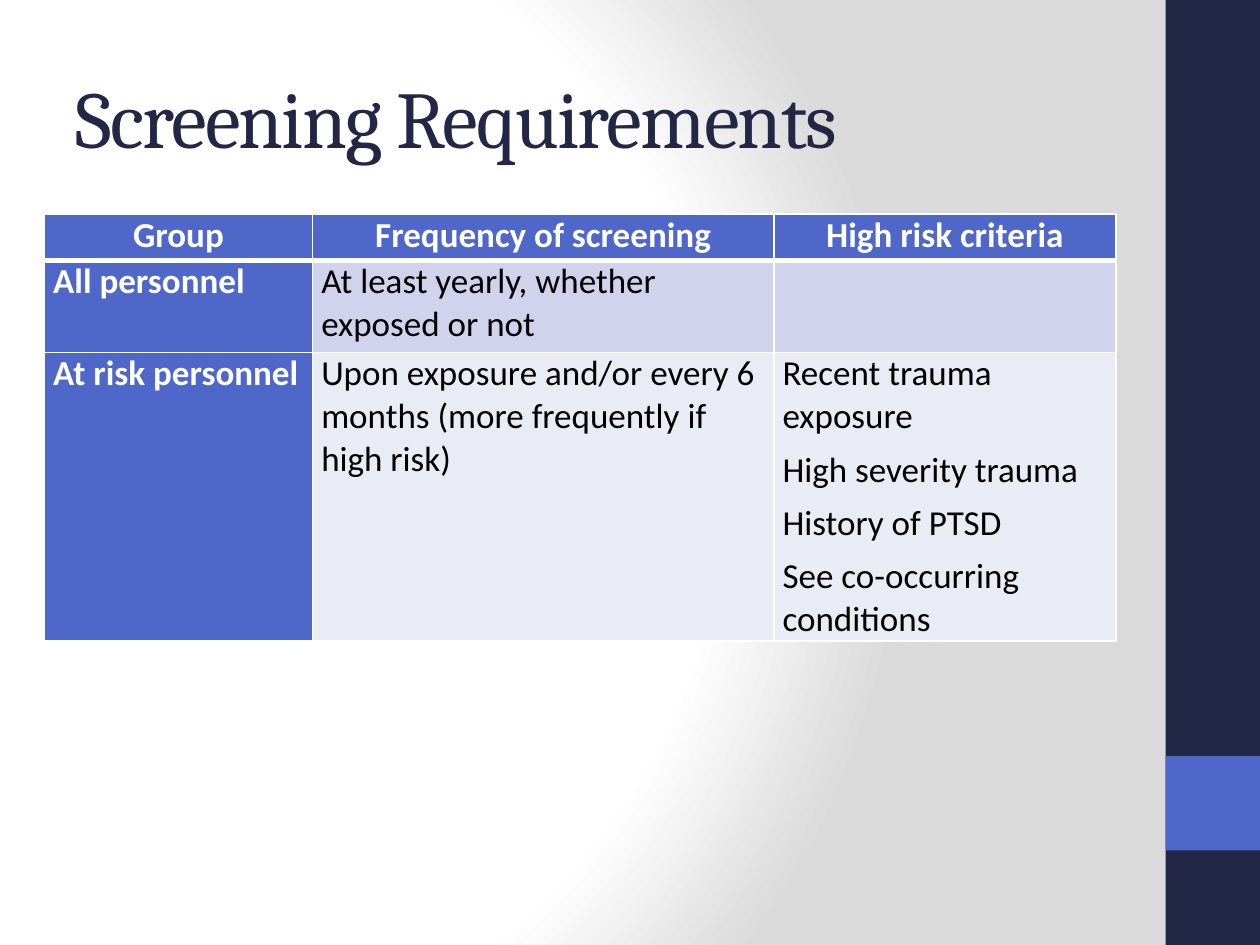
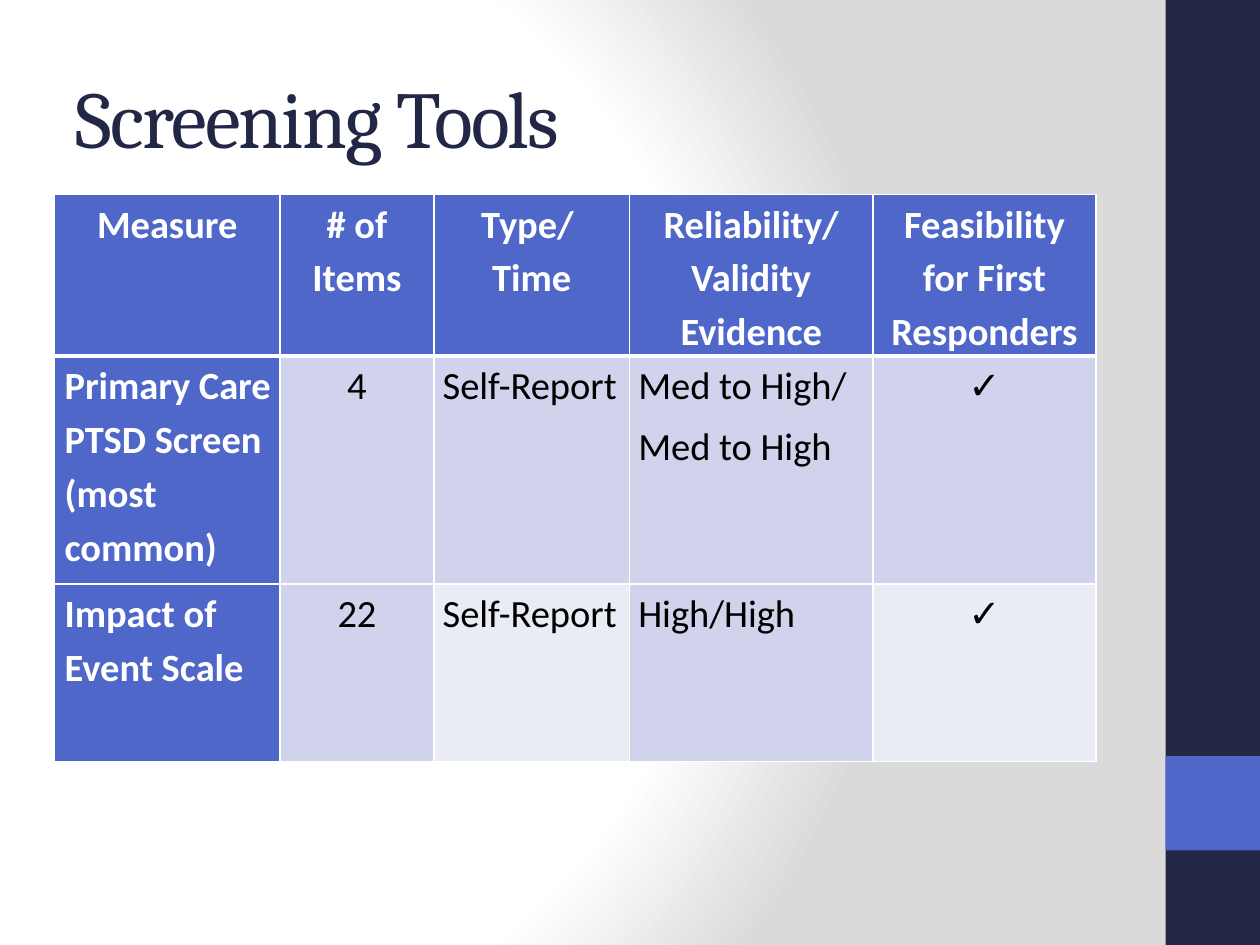
from lxml import etree
from pptx import Presentation
from pptx.dml.color import RGBColor
from pptx.enum.shapes import MSO_SHAPE
from pptx.enum.text import MSO_ANCHOR, PP_ALIGN
from pptx.oxml import parse_xml
from pptx.oxml.ns import nsdecls, qn
from pptx.util import Pt

LEFT, CENTER = PP_ALIGN.LEFT, PP_ALIGN.CENTER
MIDDLE = MSO_ANCHOR.MIDDLE
RECT = MSO_SHAPE.RECTANGLE
TITLE_ONLY = 5

COLORS = {
    "navy": "212745",
    "accent": "4E67C8",
    "band": "D0D3EB",
    "light": "E9EBF5",
    "white": "FFFFFF",
    "black": "000000",
    "grey": "DADADA",
}
TITLE_FONT, BODY_FONT = "Cambria", "Calibri"


def rgb(name):
    return RGBColor.from_string(COLORS[name])


def put_text(tf, text, font=BODY_FONT, size=20, color="black", bold=False, align=LEFT,
             before=0, after=0, line=None, tracking=None):
    """Write text into tf: a newline starts a paragraph, a vertical tab a line."""
    for i, part in enumerate(text.split("\n")):
        p = tf.paragraphs[0] if i == 0 else tf.add_paragraph()
        p.text = part
        p.alignment = align
        p.space_before, p.space_after = Pt(before), Pt(after)
        if line:
            p.line_spacing = line
        for r in p.runs:
            r.font.name, r.font.size, r.font.bold = font, Pt(size), bold
            r.font.color.rgb = rgb(color)
            if tracking:
                r.font._element.set("spc", str(tracking * 100))


def set_background(master):
    stops = "".join(
        f'<a:gs pos="{pos * 1000}"><a:srgbClr val="{COLORS[name]}"/></a:gs>'
        for pos, name in ((0, "white"), (75, "white"), (100, "grey")))
    bg = parse_xml(
        f'<p:bg {nsdecls("p", "a")}><p:bgPr><a:gradFill rotWithShape="1">'
        f'<a:gsLst>{stops}</a:gsLst><a:path path="circle">'
        '<a:fillToRect l="20000" t="50000" r="100000" b="50000"/></a:path>'
        '</a:gradFill><a:effectLst/></p:bgPr></p:bg>')
    c_sld = master.element.find(qn("p:cSld"))
    for old in c_sld.findall(qn("p:bg")):
        c_sld.remove(old)
    c_sld.insert(0, bg)


def add_band(slide, master, top, height, color, position):
    """Draw a band at the right edge and move it to the master's shapes."""
    sp = slide.shapes.add_shape(RECT, Pt(666), Pt(top), Pt(54), Pt(height))
    sp.shadow.inherit = False
    sp.fill.solid()
    sp.fill.fore_color.rgb = rgb(color)
    sp.line.fill.background()
    master.shapes._spTree.insert(2 + position, sp._element)


def add_title_slide(prs, title):
    slide = prs.slides.add_slide(prs.slide_layouts[TITLE_ONLY])
    sp = slide.shapes.title
    sp.left, sp.top, sp.width, sp.height = Pt(36), Pt(21.6), Pt(600), Pt(90)
    sp.text_frame.word_wrap = True
    sp.text_frame.vertical_anchor = MIDDLE
    put_text(sp.text_frame, title, font=TITLE_FONT, size=46, color="navy", tracking=-1)
    return slide


def set_borders(cell, is_header):
    widths = {"a:lnL": 1, "a:lnR": 1}
    if is_header:
        widths["a:lnT"] = 1
    widths["a:lnB"] = 3 if is_header else 1
    tc_pr = cell._tc.get_or_add_tcPr()
    for tag, width in widths.items():
        ln = etree.SubElement(tc_pr, qn(tag), w=str(Pt(width)))
        fill = etree.SubElement(ln, qn("a:solidFill"))
        etree.SubElement(fill, qn("a:srgbClr"), val=COLORS["white"])


def add_grid(slide, left, top, widths, heights, rows, centered=(), column_stripes=False,
             **text_format):
    """Add a table with a coloured header row and first column."""
    table = slide.shapes.add_table(len(rows), len(widths), Pt(left), Pt(top),
                                   Pt(sum(widths)), Pt(sum(heights))).table
    table.horz_banding = False
    table.first_col = True
    for column, width in zip(table.columns, widths):
        column.width = Pt(width)
    for r, (row, height) in enumerate(zip(rows, heights)):
        table.rows[r].height = Pt(height)
        for c, text in enumerate(row):
            cell = table.cell(r, c)
            is_head = r == 0 or c == 0
            striped = r % 2 == 1 or (column_stripes and c % 2 == 1)
            set_borders(cell, r == 0)
            cell.fill.solid()
            cell.fill.fore_color.rgb = rgb(
                "accent" if is_head else "band" if striped else "light")
            cell.margin_left = cell.margin_right = Pt(5)
            cell.margin_top = cell.margin_bottom = 0
            spacing = {"before": 0, "after": 6} if text == "✓" else {}
            put_text(cell.text_frame, text, color="white" if is_head else "black",
                     bold=is_head, align=CENTER if r == 0 or c in centered else LEFT,
                     **{**text_format, **spacing})
    return table


def add_requirements(slide):
    rows = [
        ["Group", "Frequency of screening", "High risk criteria"],
        ["All personnel", "At least yearly, whether exposed or not", ""],
        ["At risk personnel",
         "Upon exposure and/or every 6 months (more frequently if high risk)",
         "Recent trauma exposure\nHigh severity trauma\nHistory of PTSD\n"
         "See co-occurring conditions"],
    ]
    add_grid(slide, 25.4, 122.4, [153.2, 263.6, 195.6], [26.4, 52.6, 95], rows, after=6)


def add_tools(slide):
    rows = [
        ["Measure", "# of Items", "Type/ \vTime", "Reliability/ Validity Evidence",
         "Feasibility for First Responders"],
        ["Primary Care PTSD Screen (most common)", "4", "Self-Report",
         "Med to High/\nMed to High", "✓"],
        ["Impact of Event Scale", "22", "Self-Report", "High/High", "✓"],
    ]
    table = add_grid(slide, 31.2, 111.2, [128.8, 88, 111.8, 139, 127.6],
                     [84.2, 130.3, 101.5], rows, centered=(1, 4), column_stripes=True,
                     size=22, before=2, after=2, line=1.15)
    time_head = table.cell(0, 2)
    time_head.margin_left = time_head.margin_right = Pt(0.7)
    for r in (1, 2):
        measure = table.cell(r, 0)
        measure.margin_left, measure.margin_right = Pt(5.7), Pt(0.7)


def main():
    prs = Presentation()
    prs.slide_width, prs.slide_height = Pt(720), Pt(540)
    master = prs.slide_master
    set_background(master)

    requirements = add_title_slide(prs, "Screening Requirements")
    add_band(requirements, master, 0, 540, "navy", 0)
    add_band(requirements, master, 432, 54, "accent", 1)
    add_requirements(requirements)

    add_tools(add_title_slide(prs, "Screening Tools"))
    prs.save("out.pptx")


if __name__ == "__main__":
    main()
